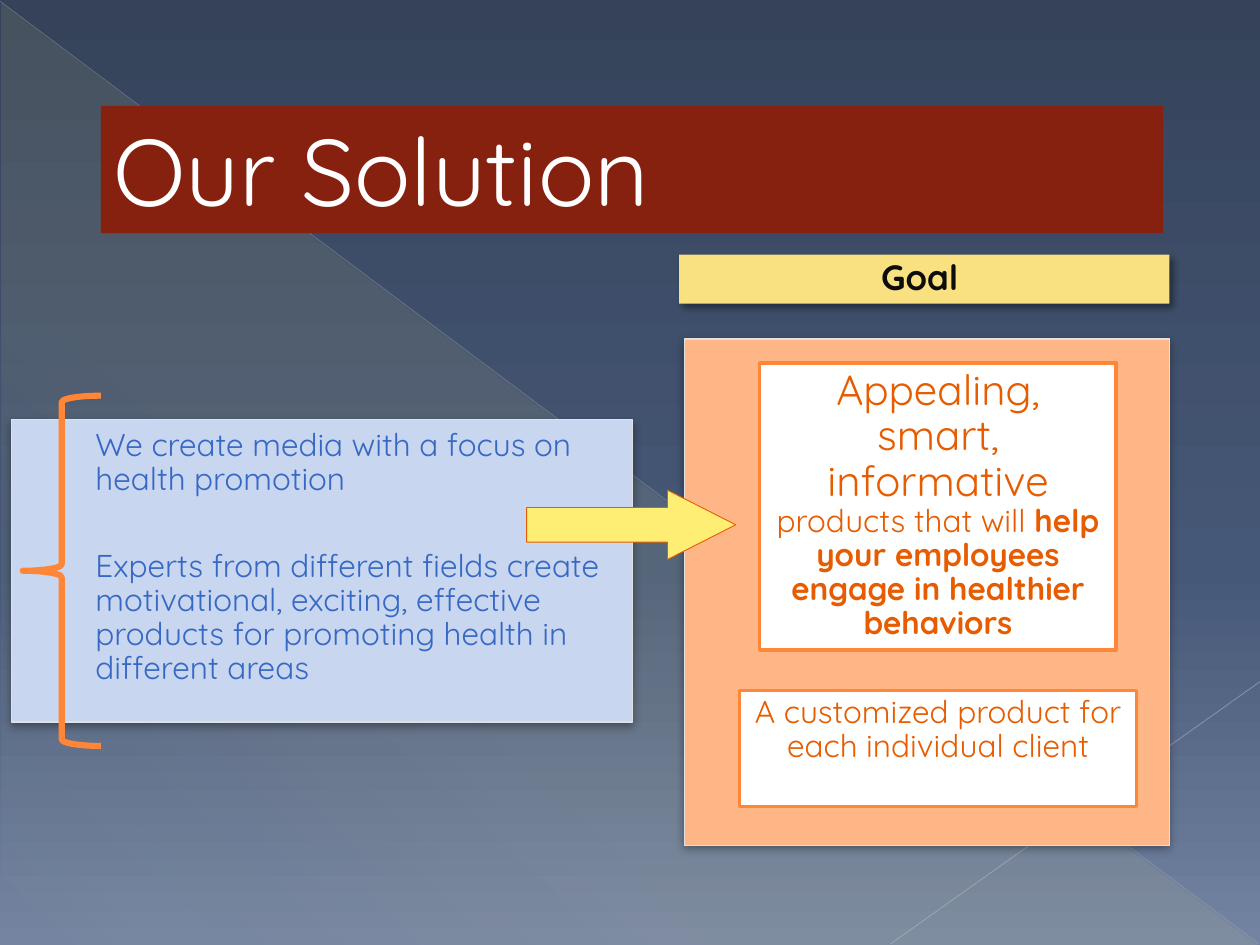
from lxml.etree import SubElement
from pptx import Presentation
from pptx.dml.color import RGBColor
from pptx.enum.shapes import MSO_CONNECTOR as Connector, MSO_SHAPE as Shape
from pptx.enum.text import MSO_ANCHOR as Anchor, PP_ALIGN as Align
from pptx.oxml.ns import qn
from pptx.util import Inches, Pt

WHITE = RGBColor(0xFF, 0xFF, 0xFF)
BLACK = RGBColor(0x00, 0x00, 0x00)
INK = RGBColor(0x0D, 0x0D, 0x0D)
NIGHT = RGBColor(0x35, 0x42, 0x5A)
SLATE = RGBColor(0x46, 0x58, 0x77)
HAZE = RGBColor(0x73, 0x83, 0xA2)
GLOW = RGBColor(0xFF, 0xF3, 0x9D)
LONG_RAY = RGBColor(0xBA, 0xBD, 0xC4)
SHORT_RAY = RGBColor(0xC1, 0xC4, 0xCA)
MAROON = RGBColor(0x86, 0x21, 0x10)
GOLD = RGBColor(0xF9, 0xE1, 0x81)
PEACH = RGBColor(0xFE, 0xB6, 0x87)
PALE_BLUE = RGBColor(0xC8, 0xD6, 0xF0)
BLUE = RGBColor(0x36, 0x68, 0xC4)
EDGE = RGBColor(0xE1, 0xE1, 0xE1)
YELLOW = RGBColor(0xFF, 0xEE, 0x74)
RUST = RGBColor(0xE7, 0x5C, 0x01)
ORANGE = RGBColor(0xFE, 0x86, 0x37)
BRACE_ORANGE = RGBColor(0xFF, 0x86, 0x36)

PANEL_SHADOW = {"alpha": 35, "blur": 5, "distance": 1.8, "angle": 90}
HEADER_SHADOW = {"alpha": 40, "blur": 4, "distance": 3, "angle": 45}


def add_color(parent, color, alpha=100):
    node = SubElement(parent, qn("a:srgbClr"), val=str(color))
    if alpha < 100:
        SubElement(node, qn("a:alpha"), val=str(alpha * 1000))


def set_gradient(root, stops, angle):
    """Replace the gradient under root; stops are (percent, color, opacity)."""
    gradient = next(root.iter(qn("a:gradFill")))
    for child in list(gradient):
        gradient.remove(child)
    stop_list = SubElement(gradient, qn("a:gsLst"))
    for position, color, alpha in stops:
        stop = SubElement(stop_list, qn("a:gs"), pos=str(position * 1000))
        add_color(stop, color, alpha)
    SubElement(gradient, qn("a:lin"), ang=str(angle * 60000), scaled="0")


class SlideBuilder:
    """Holds the text style and the current slide."""

    font = "Quicksand"

    def __init__(self, page):
        self.page = page

    def background(self, stops, angle):
        self.page.background.fill.gradient()
        set_gradient(self.page.element, stops, angle)

    def ray(self, start, end, color, width, alpha):
        line = self.page.shapes.add_connector(
            Connector.STRAIGHT, *map(Inches, start + end))
        line.line.width = Pt(width)
        line.line.color.rgb = color
        node = next(line.element.spPr.iter(qn("a:srgbClr")))
        SubElement(node, qn("a:alpha"), val=str(alpha * 1000))
        SubElement(line.element.spPr, qn("a:effectLst"))

    def shape(self, kind, place, fill=None, line=None, width=0.75, shadow=None):
        shape = self.page.shapes.add_shape(kind, *map(Inches, place))
        shape.shadow.inherit = False
        if fill is None:
            shape.fill.background()
        else:
            shape.fill.solid()
            shape.fill.fore_color.rgb = fill
        if line is None:
            shape.line.fill.background()
        else:
            shape.line.color.rgb = line
            shape.line.width = Pt(width)
        if shadow:
            effects = shape.element.spPr.find(qn("a:effectLst"))
            outer = SubElement(
                effects, qn("a:outerShdw"), blurRad=str(Pt(shadow["blur"])),
                dist=str(Pt(shadow["distance"])),
                dir=str(shadow["angle"] * 60000), rotWithShape="0")
            add_color(outer, BLACK, shadow["alpha"])
        return shape

    def text_box(self, place):
        return self.page.shapes.add_textbox(*map(Inches, place))

    def set_text(self, box, paragraphs, color, frame_format=None, **para_format):
        """Fill box; each paragraph is a list of (text, font format) pairs."""
        frame = box.text_frame
        frame_values = {"word_wrap": True, "vertical_anchor": Anchor.TOP}
        for name, value in (frame_values | (frame_format or {})).items():
            setattr(frame, name, value)
        para_values = {"alignment": Align.LEFT, "line_spacing": 0.9} | para_format
        for index, spans in enumerate(paragraphs):
            para = frame.add_paragraph() if index else frame.paragraphs[0]
            for name, value in para_values.items():
                setattr(para, name, value)
            for text, font_format in spans:
                span = para.add_run()
                span.text = text
                span.font.color.rgb = color
                font_values = {"name": self.font, "size": Pt(18)} | font_format
                for name, value in font_values.items():
                    setattr(span.font, name, value)


def main():
    deck = Presentation()
    deck.slide_width, deck.slide_height = Inches(10), Inches(7.5)
    slide = SlideBuilder(deck.slides.add_slide(deck.slide_layouts[6]))

    slide.background([(0, NIGHT, 100), (60, SLATE, 100), (100, HAZE, 100)], 90)
    glow = slide.shape(Shape.RIGHT_TRIANGLE, (0.01, 0.02, 9.98, 7.48))
    glow.fill.gradient()
    set_gradient(glow.element.spPr,
                 [(0, GLOW, 10), (70, GLOW, 8), (100, GLOW, 1)], 133)
    slide.ray((0, 0.01), (9.99, 7.49), LONG_RAY, 0.39, 35)
    slide.ray((10, 5.41), (7.07, 7.49), SHORT_RAY, 0.47, 45)

    slide.shape(Shape.RECTANGLE, (5.39, 2.02, 3.89, 0.39), GOLD,
                shadow=HEADER_SHADOW)
    slide.shape(Shape.RECTANGLE, (5.43, 2.69, 3.85, 4.02), PEACH, EDGE,
                shadow=PANEL_SHADOW)
    slide.set_text(slide.text_box((5.84, 2.09, 2.92, 0.24)),
                   [[("Goal", {"size": Pt(20), "bold": True})]], INK,
                   {"vertical_anchor": Anchor.MIDDLE,
                    "margin_left": 0, "margin_right": 0},
                   alignment=Align.CENTER, line_spacing=0.95)

    slide.shape(Shape.RECTANGLE, (0.09, 3.33, 4.93, 2.4), PALE_BLUE, EDGE,
                shadow=PANEL_SHADOW)
    arrow = slide.shape(Shape.RIGHT_ARROW, (4.18, 3.89, 1.66, 0.55),
                        YELLOW, RUST, 0.5)
    arrow.adjustments[1] = 0.985
    slide.set_text(slide.text_box((0.66, 3.36, 4.24, 2.15)), [
        [("We create media with a focus on health promotion", {})],
        [("Experts from different fields create motivational, exciting, "
          "effective products for promoting health in different areas", {})],
    ], BLUE, space_after=Pt(30))

    title = slide.shape(Shape.RECTANGLE, (0.8, 0.84, 8.43, 1.01), MAROON)
    slide.set_text(title, [[("Our Solution", {"size": Pt(54)})]], WHITE,
                   line_spacing=1.0)
    slide.shape(Shape.LEFT_BRACE, (0.18, 3.14, 0.62, 2.78),
                line=BRACE_ORANGE, width=3.5)

    goals = [
        ((6.03, 2.88, 2.83, 2.28), [
            ("Appealing, smart, informative ", {"size": Pt(24)}),
            ("products that will ", {}),
            ("help your employees engage in healthier behaviors",
             {"bold": True})]),
        ((5.87, 5.48, 3.15, 0.92), [
            ("A customized product for each individual client", {})]),
    ]
    for place, spans in goals:
        card = slide.shape(Shape.RECTANGLE, place, WHITE, ORANGE, 2)
        slide.set_text(card, [spans], RUST, alignment=Align.CENTER)

    deck.save("out.pptx")


if __name__ == "__main__":
    main()
